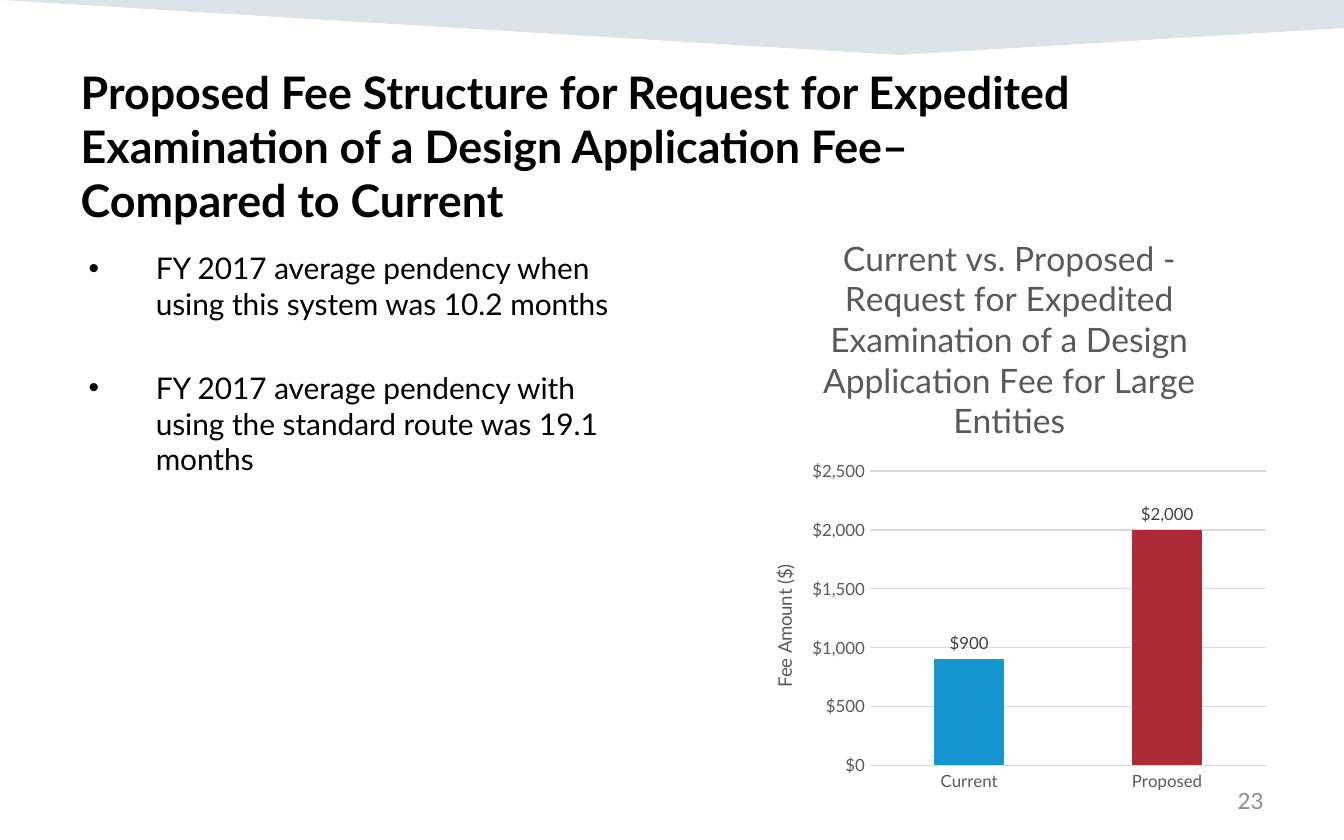
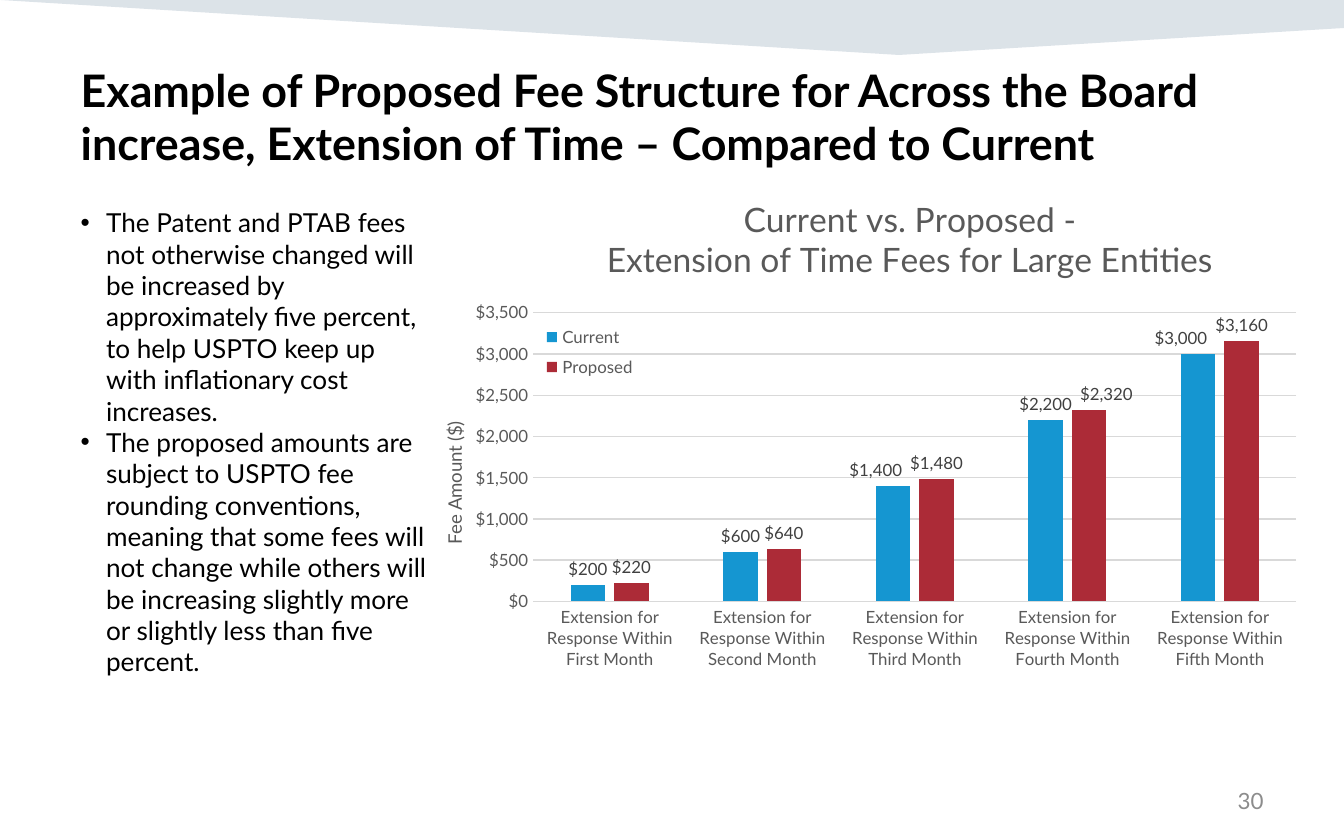
"""Build two slides that compare current and proposed patent fees."""
from dataclasses import dataclass

from lxml import etree
from pptx import Presentation
from pptx.chart.data import CategoryChartData
from pptx.dml.color import RGBColor
from pptx.enum.chart import XL_CHART_TYPE, XL_LABEL_POSITION, XL_LEGEND_POSITION, XL_TICK_MARK
from pptx.enum.text import MSO_ANCHOR, MSO_AUTO_SIZE, PP_ALIGN
from pptx.oxml.ns import qn
from pptx.util import Cm, Pt

COLUMNS = XL_CHART_TYPE.COLUMN_CLUSTERED
OUTSIDE_END = XL_LABEL_POSITION.OUTSIDE_END
LEGEND_RIGHT = XL_LEGEND_POSITION.RIGHT
NO_TICK = XL_TICK_MARK.NONE
TOP, MIDDLE = MSO_ANCHOR.TOP, MSO_ANCHOR.MIDDLE
LEFT, RIGHT = PP_ALIGN.LEFT, PP_ALIGN.RIGHT
NO_AUTO_SIZE = MSO_AUTO_SIZE.NONE


@dataclass(frozen=True)
class Theme:
    font: str = "Lato"
    text: str = "000000"
    band: str = "164469"
    page_number: str = "8C8C8C"
    chart_text: str = "595959"
    label_text: str = "404040"
    grid: str = "D9D9D9"
    current: str = "1596D1"
    proposed: str = "AC2B37"
    title_size: float = 24
    number_size: float = 12
    chart_title_size: float = 18
    axis_title_size: float = 10
    chart_size: float = 9


THEME = Theme()
DOLLARS = '"$"#,##0'
MONTHS = ["First", "Second", "Third", "Fourth", "Fifth"]

FEE_SLIDES = [
    {
        "number": "23",
        "title": ["Proposed Fee Structure for Request for Expedited Examination "
                  "of a Design Application Fee– ", "Compared to Current"],
        "title_box": (1.27, 1.1, 22.86, 3.76),
        "bullets": ["FY 2017 average pendency when using this system was 10.2 months",
                    "FY 2017 average pendency with using the standard route was 19.1 months"],
        "body_box": (1.27, 4.6, 11.2, 5.16),
        "body_size": 16, "bullet_gap": 25.6, "margin": 1.42, "hanging": 1.27,
        "chart_box": (14.02, 4.01, 10.11, 11.13),
        "chart_title": ["Current vs. Proposed -",
                        "Request for Expedited Examination of a Design Application Fee "
                        "for Large Entities"],
        "categories": ["Current", "Proposed"],
        "series": [("Series 1", [900, 2000], THEME.current)],
        "point_colors": {1: THEME.proposed},
        "maximum": 2500, "gap_width": 185,
        "plot": {"x": 0.24, "y": 0.44, "w": 0.74, "h": 0.5},
        "label_shifts": {},
    },
    {
        "number": "30",
        "title": ["Example of Proposed Fee Structure for Across the Board increase, "
                  "Extension of Time – Compared to Current"],
        "title_box": (1.27, 1.05, 22.86, 2.11),
        "bullets": ["The Patent and PTAB fees not otherwise changed will be increased by "
                    "approximately five percent, to help USPTO keep up with inflationary "
                    "cost increases.",
                    "The proposed amounts are subject to USPTO fee rounding conventions, "
                    "meaning that some fees will not change while others will be increasing "
                    "slightly more or slightly less than five percent."],
        "body_box": (1.27, 3.78, 7.1, 9.25),
        "body_size": 14, "bullet_gap": 0, "margin": 0.48, "hanging": 0.48,
        "chart_box": (8.28, 3.43, 16.38, 9.93),
        "chart_title": ["Current vs. Proposed -", "Extension of Time Fees for Large Entities"],
        "categories": [f"Extension for Response Within {month} Month" for month in MONTHS],
        "series": [("Current", [200, 600, 1400, 2200, 3000], THEME.current),
                   ("Proposed", [220, 640, 1480, 2320, 3160], THEME.proposed)],
        "point_colors": {},
        "maximum": 3500, "gap_width": 219,
        "plot": {"x": 0.11, "y": 0.25, "w": 0.88, "h": 0.55},
        "title_place": {"x": 0.19, "y": 0.02},
        "axis_title_place": {"x": 0, "y": 0.45},
        "legend": {"x": 0.11, "y": 0.26, "w": 0.13, "h": 0.13},
        "label_shifts": {(0, 2): (-0.02, 0), (0, 4): (-0.02, 0), (1, 3): (0.02, 0)},
    },
]


def style_font(font, size, color, bold=False):
    font.name = THEME.font
    font.size = Pt(size)
    font.bold = bold
    font.color.rgb = RGBColor.from_string(color)


def place(parent, index, values, edge=True, inner=False):
    for old_layout in parent.findall(qn("c:layout")):
        parent.remove(old_layout)
    layout = etree.Element(qn("c:layout"))
    manual = etree.SubElement(layout, qn("c:manualLayout"))
    settings = {"layoutTarget": "inner"} if inner else {}
    if edge:
        settings.update(xMode="edge", yMode="edge")
    settings.update(values)
    for name, value in settings.items():
        etree.SubElement(manual, qn(f"c:{name}")).set("val", str(value))
    parent.insert(index, layout)


presentation = Presentation()
presentation.slide_width = Cm(25.4)
presentation.slide_height = Cm(15.88)
layout = presentation.slide_layouts[1]
slides = [presentation.slides.add_slide(layout) for _ in FEE_SLIDES]

builder = slides[0].shapes.build_freeform(0, 0)
builder.add_line_segments([(Cm(25.4), 0), (Cm(25.4), Cm(0.53)), (Cm(16.99), Cm(1.04))], close=True)
band = builder.convert_to_shape()
band.shadow.inherit = False
band.fill.solid()
band.fill.fore_color.rgb = RGBColor.from_string(THEME.band)
band.line.fill.background()
band_color = band.element.xpath(".//a:srgbClr")[0]
etree.SubElement(band_color, qn("a:alpha")).set("val", "15000")
band.element.xpath(".//p:cNvPr")[0].set("id", "99")
layout.shapes.element.insert(2, band.element)

for slide, content in zip(slides, FEE_SLIDES):
    title, body = slide.placeholders
    for shape, box in ((title, content["title_box"]), (body, content["body_box"])):
        shape.left, shape.top, shape.width, shape.height = map(Cm, box)
        shape.text_frame.auto_size = NO_AUTO_SIZE
        shape.text_frame.vertical_anchor = TOP

    paragraph = title.text_frame.paragraphs[0]
    paragraph.alignment = LEFT
    for position, line in enumerate(content["title"]):
        if position:
            paragraph.add_line_break()
        run = paragraph.add_run()
        run.text = line
        style_font(run.font, THEME.title_size, THEME.text, bold=True)

    for position, bullet in enumerate(content["bullets"]):
        frame = body.text_frame
        paragraph = frame.add_paragraph() if position else frame.paragraphs[0]
        properties = paragraph._p.get_or_add_pPr()
        properties.set("marL", str(Cm(content["margin"])))
        properties.set("indent", str(-Cm(content["hanging"])))
        paragraph.space_before = Pt(content["bullet_gap"] if position else 0)
        run = paragraph.add_run()
        run.text = bullet
        style_font(run.font, content["body_size"], THEME.text)

    number_box = slide.shapes.add_textbox(Cm(18.21), Cm(14.71), Cm(5.92), Cm(0.84))
    number_box.text_frame.word_wrap = True
    number_box.text_frame.vertical_anchor = MIDDLE
    paragraph = number_box.text_frame.paragraphs[0]
    paragraph.alignment = RIGHT
    run = paragraph.add_run()
    run.text = content["number"]
    style_font(run.font, THEME.number_size, THEME.page_number)

    chart_data = CategoryChartData(number_format=DOLLARS)
    chart_data.categories = content["categories"]
    for name, values, _ in content["series"]:
        chart_data.add_series(name, values)
    chart = slide.shapes.add_chart(COLUMNS, *map(Cm, content["chart_box"]), chart_data).chart
    style_font(chart.font, THEME.axis_title_size, THEME.text)

    chart.has_title = True
    frame = chart.chart_title.text_frame
    for position, line in enumerate(content["chart_title"]):
        paragraph = frame.add_paragraph() if position else frame.paragraphs[0]
        run = paragraph.add_run()
        run.text = line
        style_font(run.font, THEME.chart_title_size, THEME.chart_text)

    category_axis, value_axis = chart.category_axis, chart.value_axis
    for axis in (category_axis, value_axis):
        axis.major_tick_mark = axis.minor_tick_mark = NO_TICK
        style_font(axis.tick_labels.font, THEME.chart_size, THEME.chart_text)
    value_axis.has_major_gridlines = True
    for line_format in (category_axis.format.line, value_axis.major_gridlines.format.line):
        line_format.color.rgb = RGBColor.from_string(THEME.grid)
        line_format.width = Pt(0.75)
    value_axis.format.line.fill.background()
    value_axis.minimum_scale = 0
    value_axis.maximum_scale = content["maximum"]
    value_axis.major_unit = 500
    value_axis.tick_labels.number_format = DOLLARS
    value_axis.tick_labels.number_format_is_linked = False
    run = value_axis.axis_title.text_frame.paragraphs[0].add_run()
    run.text = "Fee Amount ($)"
    style_font(run.font, THEME.axis_title_size, THEME.chart_text)
    axis_title = chart.element.xpath(".//c:valAx/c:title")[0]
    text_body = axis_title.xpath(".//a:bodyPr")[0]
    text_body.set("rot", "-5400000")
    text_body.set("vert", "horz")

    plot = chart.plots[0]
    plot.vary_by_categories = False
    plot.gap_width = content["gap_width"]
    plot.overlap = -27
    for series, (_, _, color) in zip(plot.series, content["series"]):
        series.format.fill.solid()
        series.format.fill.fore_color.rgb = RGBColor.from_string(color)
        labels = series.data_labels
        labels.show_value = True
        labels.position = OUTSIDE_END
        labels.number_format = DOLLARS
        labels.number_format_is_linked = False
        style_font(labels.font, THEME.chart_size, THEME.label_text)
    for point_index, color in content["point_colors"].items():
        fill = plot.series[0].points[point_index].format.fill
        fill.solid()
        fill.fore_color.rgb = RGBColor.from_string(color)

    for series_index, point_index in content["label_shifts"]:
        label = plot.series[series_index].points[point_index].data_label
        label.position = OUTSIDE_END
        style_font(label.font, THEME.chart_size, THEME.label_text)
    point_labels = chart.element.xpath(".//c:dLbl")
    for label, (shift_x, shift_y) in zip(point_labels, content["label_shifts"].values()):
        place(label, 1, {"x": shift_x, "y": shift_y}, edge=False)

    place(chart.element.xpath(".//c:plotArea")[0], 0, content["plot"], inner=True)
    if "title_place" in content:
        place(chart.element.xpath("./c:chart/c:title")[0], 1, content["title_place"])
        place(axis_title, 1, content["axis_title_place"])
    chart.has_legend = "legend" in content
    if chart.has_legend:
        chart.legend.position = LEGEND_RIGHT
        chart.legend.include_in_layout = True
        style_font(chart.legend.font, THEME.chart_size, THEME.chart_text)
        place(chart.element.xpath(".//c:legend")[0], 1, content["legend"])

presentation.save("out.pptx")
